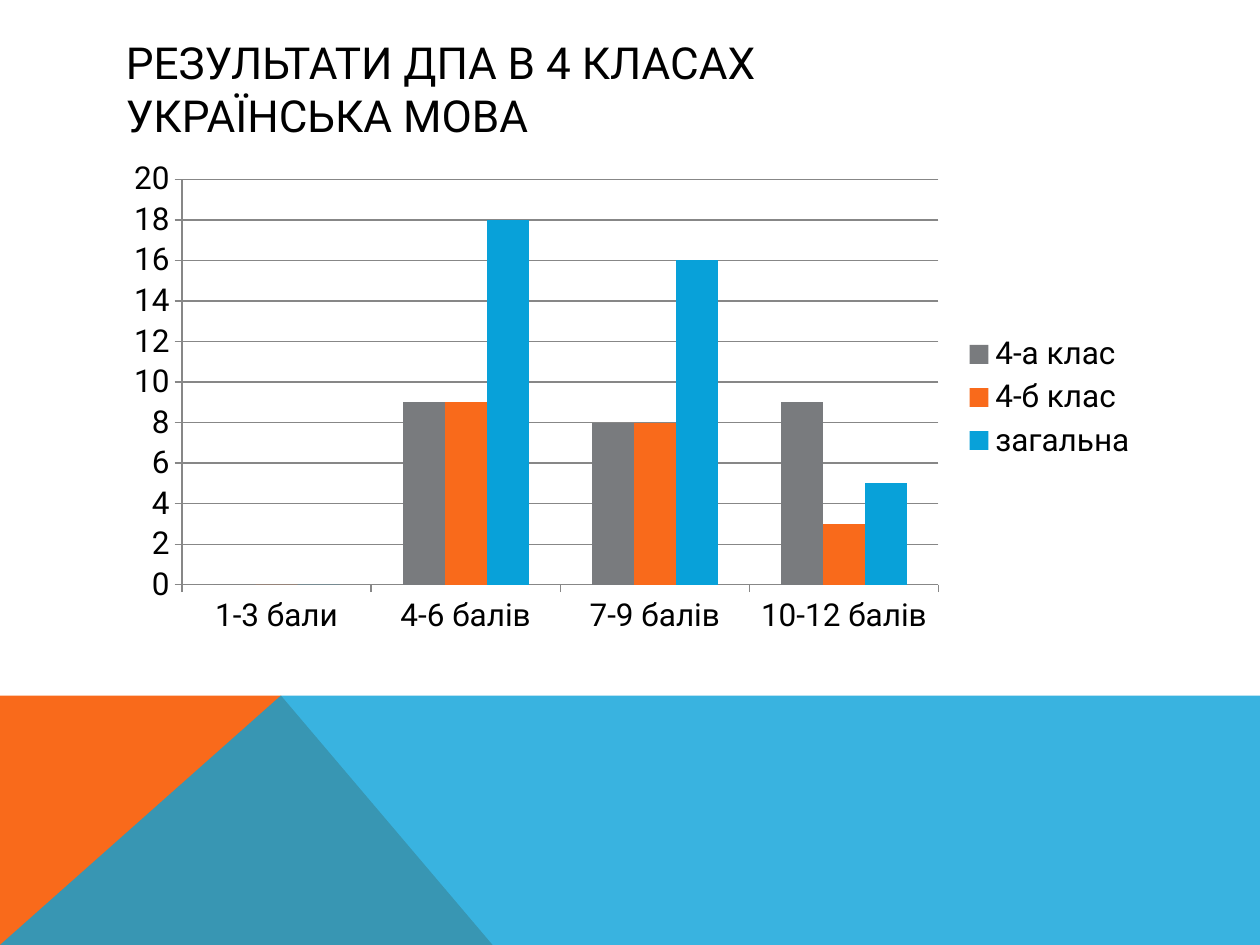
from lxml import etree
from pptx import Presentation
from pptx.chart.data import CategoryChartData
from pptx.dml.color import RGBColor
from pptx.enum.chart import XL_CHART_TYPE, XL_LEGEND_POSITION, XL_TICK_MARK
from pptx.enum.text import MSO_ANCHOR
from pptx.oxml.ns import qn
from pptx.util import Inches, Pt

COLUMNS = XL_CHART_TYPE.COLUMN_CLUSTERED
RIGHT = XL_LEGEND_POSITION.RIGHT
OUTSIDE = XL_TICK_MARK.OUTSIDE
MIDDLE = MSO_ANCHOR.MIDDLE

FONT = "Roboto"
BLACK, GRAY, ORANGE, BLUE, AXIS = "000000", "797B7E", "F96A1B", "08A1D9", "878787"
TITLE = ["РЕЗУЛЬТАТИ ДПА В 4 КЛАСАХ", "УКРАЇНСЬКА МОВА"]
GRADES = ["1-3 бали", "4-6 балів", "7-9 балів", "10-12 балів"]
CLASSES = [
    ("4-а клас", (0, 9, 8, 9), GRAY),
    ("4-б клас", (0, 9, 8, 3), ORANGE),
    ("загальна", (0, 18, 16, 5), BLUE),
]
WIDTH, HEIGHT = 10, 7.5
BAND_TOP, PEAK = 5.52, 2.23
BANDS = [
    ([(0, HEIGHT), (0, BAND_TOP), (PEAK, BAND_TOP), (3.91, HEIGHT)], ORANGE, 100),
    ([(0, HEIGHT), (PEAK, BAND_TOP), (WIDTH, BAND_TOP), (WIDTH, HEIGHT)], BLUE, 80),
]


def rgb(code):
    """Turn a hex string into a colour."""
    return RGBColor.from_string(code)


def style_font(font, size):
    """Apply the slide's typeface in black at a point size."""
    font.name, font.size, font.color.rgb = FONT, Pt(size), rgb(BLACK)


def add_band(slide, corners, color, opacity):
    """Draw one polygon of the footer."""
    points = [(Inches(x), Inches(y)) for x, y in corners]
    outline = slide.shapes.build_freeform(*points[0])
    outline.add_line_segments(points[1:], close=True)
    band = outline.convert_to_shape()
    band.shadow.inherit = False
    band.line.fill.background()
    band.fill.solid()
    band.fill.fore_color.rgb = rgb(color)
    if opacity < 100:
        tint = band._element.spPr.find(".//" + qn("a:srgbClr"))
        etree.SubElement(tint, qn("a:alpha"), val=str(opacity * 1000))


def add_title(slide):
    """Write the two-line heading."""
    box = slide.shapes.add_textbox(Inches(0.9), Inches(0.4), Inches(8.22), Inches(0.6))
    frame = box.text_frame
    frame.word_wrap = True
    frame.vertical_anchor = MIDDLE
    heading = frame.paragraphs[0]
    style_font(heading.font, 25.2)
    for number, line in enumerate(TITLE):
        if number:
            heading.add_line_break()
        heading.add_run().text = line


def add_results(slide):
    """Chart the number of pupils per grade range and class."""
    results = CategoryChartData(number_format="General")
    results.categories = GRADES
    for name, pupils, _ in CLASSES:
        results.add_series(name, pupils)
    chart = slide.shapes.add_chart(
        COLUMNS, Inches(0.9), Inches(1.2), Inches(8.23), Inches(3.91), results
    ).chart
    style_font(chart.font, 18)
    chart.has_title = False
    chart.has_legend = True
    chart.legend.position = RIGHT
    chart.legend.include_in_layout = False
    chart.value_axis.has_major_gridlines = True
    gridlines = chart.value_axis.major_gridlines
    for axis in (chart.category_axis, chart.value_axis):
        axis.major_tick_mark = OUTSIDE
    for part in (chart.category_axis.format, chart.value_axis.format, gridlines.format):
        part.line.color.rgb = rgb(AXIS)
        part.line.width = Pt(0.75)
    plot = chart.plots[0]
    plot.gap_width = 150
    plot.vary_by_categories = False
    for series, (_, _, color) in zip(plot.series, CLASSES):
        series.format.fill.solid()
        series.format.fill.fore_color.rgb = rgb(color)


def main():
    """Build and save the slide."""
    deck = Presentation()
    deck.slide_width, deck.slide_height = Inches(WIDTH), Inches(HEIGHT)
    slide = deck.slides.add_slide(deck.slide_layouts[6])
    for band in BANDS:
        add_band(slide, *band)
    add_title(slide)
    add_results(slide)
    deck.save("out.pptx")


if __name__ == "__main__":
    main()
